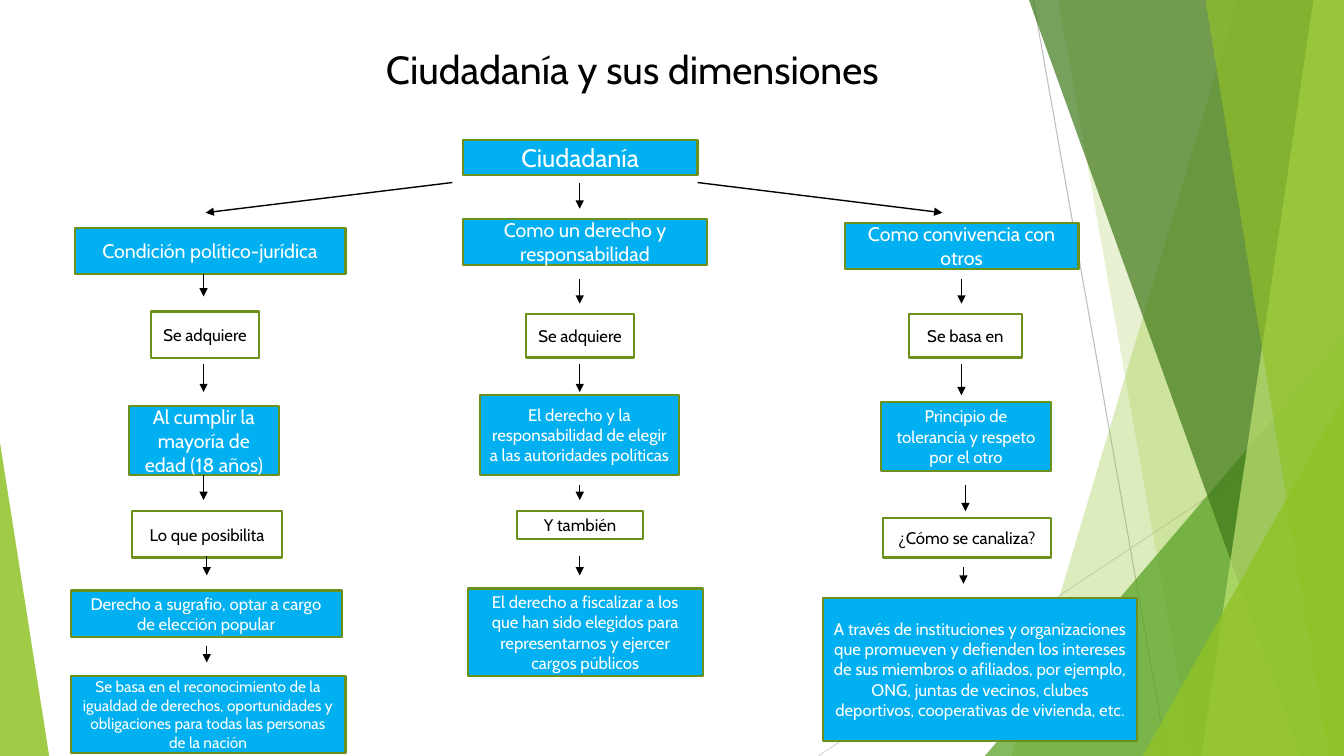
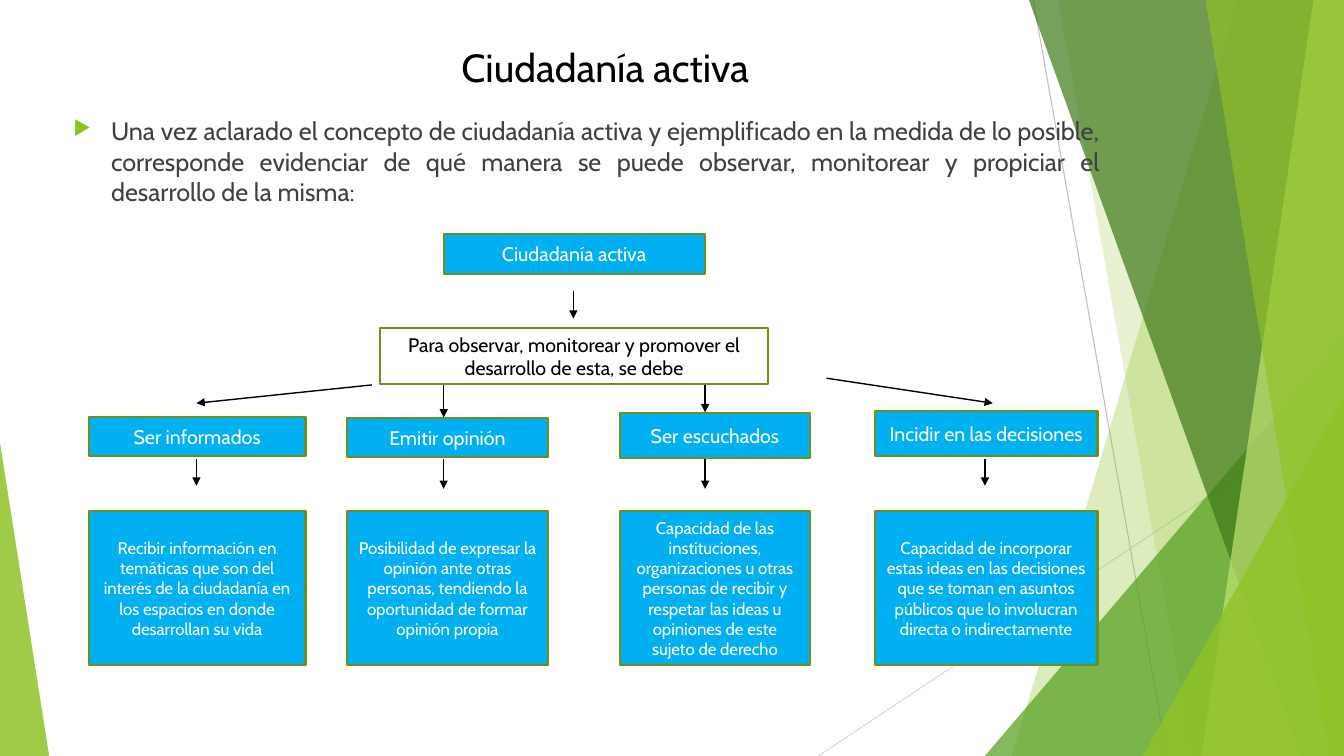
"""Build two slides of concept maps about citizenship and its dimensions."""
from dataclasses import dataclass

from pptx import Presentation
from pptx.dml.color import RGBColor
from pptx.enum.shapes import MSO_CONNECTOR, MSO_SHAPE
from pptx.enum.text import MSO_ANCHOR, PP_ALIGN
from pptx.oxml.ns import qn
from pptx.util import Cm, Pt
from lxml import etree

STRAIGHT = MSO_CONNECTOR.STRAIGHT
RECTANGLE = MSO_SHAPE.RECTANGLE
TRIANGLE = MSO_SHAPE.ISOSCELES_TRIANGLE
TOP, MIDDLE = MSO_ANCHOR.TOP, MSO_ANCHOR.MIDDLE
CENTER, JUSTIFY = PP_ALIGN.CENTER, PP_ALIGN.JUSTIFY


@dataclass(frozen=True)
class Theme:
    """Colours, type sizes and line widths of both slides."""
    font: str = "Cabin"
    black: str = "000000"
    white: str = "FFFFFF"
    body_text: str = "404040"
    blue: str = "00B0F0"
    border: str = "6B901C"
    lime: str = "90C226"
    green: str = "54A021"
    forest: str = "3F7819"
    pale: str = "C0E474"
    rule: str = "BFBFBF"
    faint_rule: str = "D9D9D9"
    title: int = 28
    large: int = 18
    heading: int = 14
    label: int = 12
    small: int = 11
    border_width: float = 1.5
    arrow_width: float = 1
    rule_width: float = 0.75


THEME = Theme()
WIDTH, HEIGHT = 33.87, 19.05

BOX_STYLES = {
    "step": (THEME.blue, THEME.white),
    "link": (None, THEME.black),
    "panel": (THEME.white, THEME.black),
}

RULES = [
    ((26.04, 0, 29.41, HEIGHT), THEME.rule),
    ((WIDTH, 10.24, 20.62, HEIGHT), THEME.faint_rule),
]
DECORATIONS = [
    ("band", (31.19, 25.5), THEME.lime, 30),
    ("band", (26.67, 30.05), THEME.lime, 20),
    ("corner", (24.82, 8.46, WIDTH, 1), THEME.green, 72),
    ("band", (25.93, 32.79), THEME.forest, 70),
    ("band", (33.1, 30.28), THEME.pale, 70),
    ("band", (30.38, 33.48), THEME.lime, 65),
    ("corner", (28.8, 9.98, WIDTH, 1), THEME.lime, 80),
    ("corner", (0, 11.15, 1.24, 0), THEME.lime, 85),
]

DIMENSION_BOXES = [
    ("step", (11.66, 3.53, 5.92, 0.89), THEME.large, "Ciudadanía"),
    ("step", (1.88, 5.74, 6.83, 1.17), THEME.heading, "Condición político-jurídica"),
    ("link", (3.81, 7.85, 2.72, 1.17), THEME.label, "Se adquiere"),
    ("step", (3.25, 10.24, 3.78, 1.73), THEME.heading,
     "Al cumplir la mayoría de edad (18 años)"),
    ("link", (3.33, 12.88, 3.78, 1.17), THEME.label, "Lo que posibilita"),
    ("step", (1.78, 14.88, 6.83, 1.17), THEME.label,
     "Derecho a sugrafio, optar a cargo de elección popular"),
    ("step", (1.78, 17.04, 6.93, 1.93), THEME.small,
     "Se basa en el reconocimiento de la igualdad de derechos, oportunidades y "
     "obligaciones para todas las personas de la nación"),
    ("step", (11.66, 5.51, 6.17, 1.17), THEME.heading, "Como un derecho y responsabilidad"),
    ("link", (13.26, 7.92, 2.72, 1.09), THEME.label, "Se adquiere"),
    ("step", (12.09, 9.96, 5.03, 2.01), THEME.label,
     "El derecho y la responsabilidad de elegir a las autoridades políticas"),
    ("link", (13.03, 12.88, 3.18, 0.71), THEME.label, "Y también"),
    ("step", (11.79, 14.83, 5.92, 2.21), THEME.label,
     "El derecho a fiscalizar a los que han sido elegidos para representarnos y "
     "ejercer cargos públicos"),
    ("step", (21.29, 5.61, 5.89, 1.17), THEME.heading, "Como convivencia con otros"),
    ("link", (22.91, 7.92, 2.84, 1.09), THEME.label, "Se basa en"),
    ("step", (22.2, 10.13, 4.29, 1.73), THEME.label,
     "Principio de tolerancia y respeto por el otro"),
    ("link", (22.25, 13.06, 4.24, 0.99), THEME.label, "¿Cómo se canaliza?"),
    ("step", (20.75, 15.06, 7.9, 3.61), THEME.label,
     "A través de instituciones y organizaciones que promueven y defienden los "
     "intereses de sus miembros o afiliados, por ejemplo, ONG, juntas de vecinos, "
     "clubes deportivos, cooperativas de vivienda, etc."),
]
DIMENSION_BRANCHES = [(11.4, 4.6, 5.18, 5.36), (17.58, 4.6, 23.75, 5.36)]
DIMENSION_DROPS = [
    (5.13, [(6.91, 7.47), (9.17, 9.88), (11.96, 12.6)]),
    (5.21, [(14.02, 14.5), (16.28, 16.69)]),
    (14.61, [(4.6, 5.26), (7.04, 7.65), (9.17, 9.88), (12.22, 12.6), (14.02, 14.5)]),
    (24.23, [(7.04, 7.65), (9.17, 9.96)]),
    (24.33, [(12.22, 12.88)]),
    (24.28, [(14.3, 14.71)]),
]

ACTIVE_INTRO = (
    "Una vez aclarado el concepto de ciudadanía activa y ejemplificado en la medida "
    "de lo posible, corresponde evidenciar de qué manera se puede observar, "
    "monitorear y propiciar el desarrollo de la misma:"
)
ACTIVE_ROOTS = [
    ("step", (11.18, 5.89, 6.58, 1.02), THEME.heading, "Ciudadanía activa"),
    ("panel", (9.58, 8.26, 9.78, 1.42), THEME.heading,
     "Para observar, monitorear y promover el desarrollo de esta, se debe"),
]
ACTIVE_COLUMNS = [
    (2.24, 5.46, 10.52, 0.97, "Ser informados",
     "Recibir información en temáticas que son del interés de la ciudadanía en los "
     "espacios en donde desarrollan su vida"),
    (8.74, 5.08, 10.54, 0.97, "Emitir opinión",
     "Posibilidad de expresar la opinión ante otras personas, tendiendo la "
     "oportunidad de formar opinión propia"),
    (15.62, 4.8, 10.41, 1.14, "Ser escuchados",
     "Capacidad de las instituciones, organizaciones u otras personas de recibir y "
     "respetar las ideas u opiniones de este sujeto de derecho"),
    (22.05, 5.61, 10.36, 1.14, "Incidir en las decisiones",
     "Capacidad de incorporar estas ideas en las decisiones que se toman en asuntos "
     "públicos que lo involucran directa o indirectamente"),
]
DETAIL_TOP, DETAIL_HEIGHT = 12.88, 3.89
ACTIVE_BRANCHES = [(9.37, 9.7, 4.95, 10.16), (20.83, 9.53, 25.02, 10.16)]
ACTIVE_DROPS = [
    (14.45, [(7.34, 8.03)]),
    (4.95, [(11.56, 12.24)]),
    (11.18, [(9.7, 10.52), (11.56, 12.32)]),
    (17.77, [(9.7, 10.39), (11.56, 12.32)]),
    (24.82, [(11.56, 12.24)]),
]


def set_values(target, values):
    for name, value in values.items():
        setattr(target, name, value)


def add_element(parent, tag, **attributes):
    return etree.SubElement(parent, qn(tag), attributes)


def set_fill(shape, colour, opacity=100):
    shape.fill.solid()
    shape.fill.fore_color.rgb = RGBColor.from_string(colour)
    if opacity < 100:
        node = shape._element.spPr.find(qn("a:solidFill")).find(qn("a:srgbClr"))
        add_element(node, "a:alpha", val=str(opacity * 1000))


def write_text(shape, text, size, colour, alignment=CENTER, anchor=MIDDLE):
    frame = shape.text_frame
    set_values(frame, {"word_wrap": True, "vertical_anchor": anchor})
    paragraph = frame.paragraphs[0]
    paragraph.alignment = alignment
    run = paragraph.add_run()
    run.text = text
    set_values(run.font, {"name": THEME.font, "size": Pt(size)})
    run.font.color.rgb = RGBColor.from_string(colour)
    return paragraph


def add_line(slide, ends, colour, width, arrow=False):
    connector = slide.shapes.add_connector(STRAIGHT, *map(Cm, ends))
    connector.line.color.rgb = RGBColor.from_string(colour)
    connector.line.width = Pt(width)
    properties = connector._element.spPr
    if arrow:
        add_element(properties.find(qn("a:ln")), "a:tailEnd", type="triangle")
    add_element(properties, "a:effectLst")


def add_band(slide, top_x, bottom_x):
    corners = [(WIDTH, 0), (WIDTH, HEIGHT), (bottom_x, HEIGHT)]
    builder = slide.shapes.build_freeform(Cm(top_x), 0)
    builder.add_line_segments([(Cm(x), Cm(y)) for x, y in corners], close=True)
    return builder.convert_to_shape()


def add_corner(slide, left, top, right, apex):
    shape = slide.shapes.add_shape(
        TRIANGLE, Cm(left), Cm(top), Cm(right - left), Cm(HEIGHT - top))
    shape.adjustments[0] = apex
    return shape


def add_box(slide, style, place, size, text):
    fill, colour = BOX_STYLES[style]
    shape = slide.shapes.add_shape(RECTANGLE, *map(Cm, place))
    shape.shadow.inherit = False
    if fill:
        set_fill(shape, fill)
    else:
        shape.fill.background()
    shape.line.color.rgb = RGBColor.from_string(THEME.border)
    shape.line.width = Pt(THEME.border_width)
    write_text(shape, text, size, colour)


def add_arrows(slide, branches, drops):
    vertical = [(x, start, x, end) for x, spans in drops for start, end in spans]
    for ends in branches + vertical:
        add_line(slide, ends, THEME.black, THEME.arrow_width, arrow=True)


def add_base_slide(presentation, title, title_center, title_top):
    slide = presentation.slides.add_slide(presentation.slide_layouts[6])
    for ends, colour in RULES:
        add_line(slide, ends, colour, THEME.rule_width)
    builders = {"band": add_band, "corner": add_corner}
    for kind, geometry, colour, opacity in DECORATIONS:
        shape = builders[kind](slide, *geometry)
        shape.shadow.inherit = False
        set_fill(shape, colour, opacity)
        shape.line.fill.background()
    width = 20
    box = slide.shapes.add_textbox(
        Cm(title_center - width / 2), Cm(title_top), Cm(width), Cm(1.65))
    write_text(box, title, THEME.title, THEME.black)
    return slide


def add_bullet(slide, place, text):
    box = slide.shapes.add_textbox(*map(Cm, place))
    paragraph = write_text(box, text, THEME.large, THEME.body_text, JUSTIFY, TOP)
    properties = paragraph._p.get_or_add_pPr()
    indent = Cm(0.95)
    properties.set("marL", str(indent))
    properties.set("indent", str(-indent))
    add_element(add_element(properties, "a:buClr"), "a:srgbClr", val=THEME.lime)
    add_element(properties, "a:buSzPct", val="80000")
    add_element(properties, "a:buChar", char="▶")


def build_dimensions(presentation):
    slide = add_base_slide(presentation, "Ciudadanía y sus dimensiones", 15.93, 0.92)
    for box in DIMENSION_BOXES:
        add_box(slide, *box)
    add_arrows(slide, DIMENSION_BRANCHES, DIMENSION_DROPS)


def build_active(presentation):
    slide = add_base_slide(presentation, "Ciudadanía activa", 15.25, 0.85)
    add_bullet(slide, (1.6, 2.79, 26.37, 2.8), ACTIVE_INTRO)
    for box in ACTIVE_ROOTS:
        add_box(slide, *box)
    for left, width, top, height, heading, detail in ACTIVE_COLUMNS:
        add_box(slide, "step", (left, top, width, height), THEME.heading, heading)
        add_box(slide, "step", (left, DETAIL_TOP, width, DETAIL_HEIGHT), THEME.label, detail)
    add_arrows(slide, ACTIVE_BRANCHES, ACTIVE_DROPS)


def main():
    presentation = Presentation()
    set_values(presentation, {"slide_width": Cm(WIDTH), "slide_height": Cm(HEIGHT)})
    build_dimensions(presentation)
    build_active(presentation)
    presentation.save("out.pptx")


if __name__ == "__main__":
    main()
